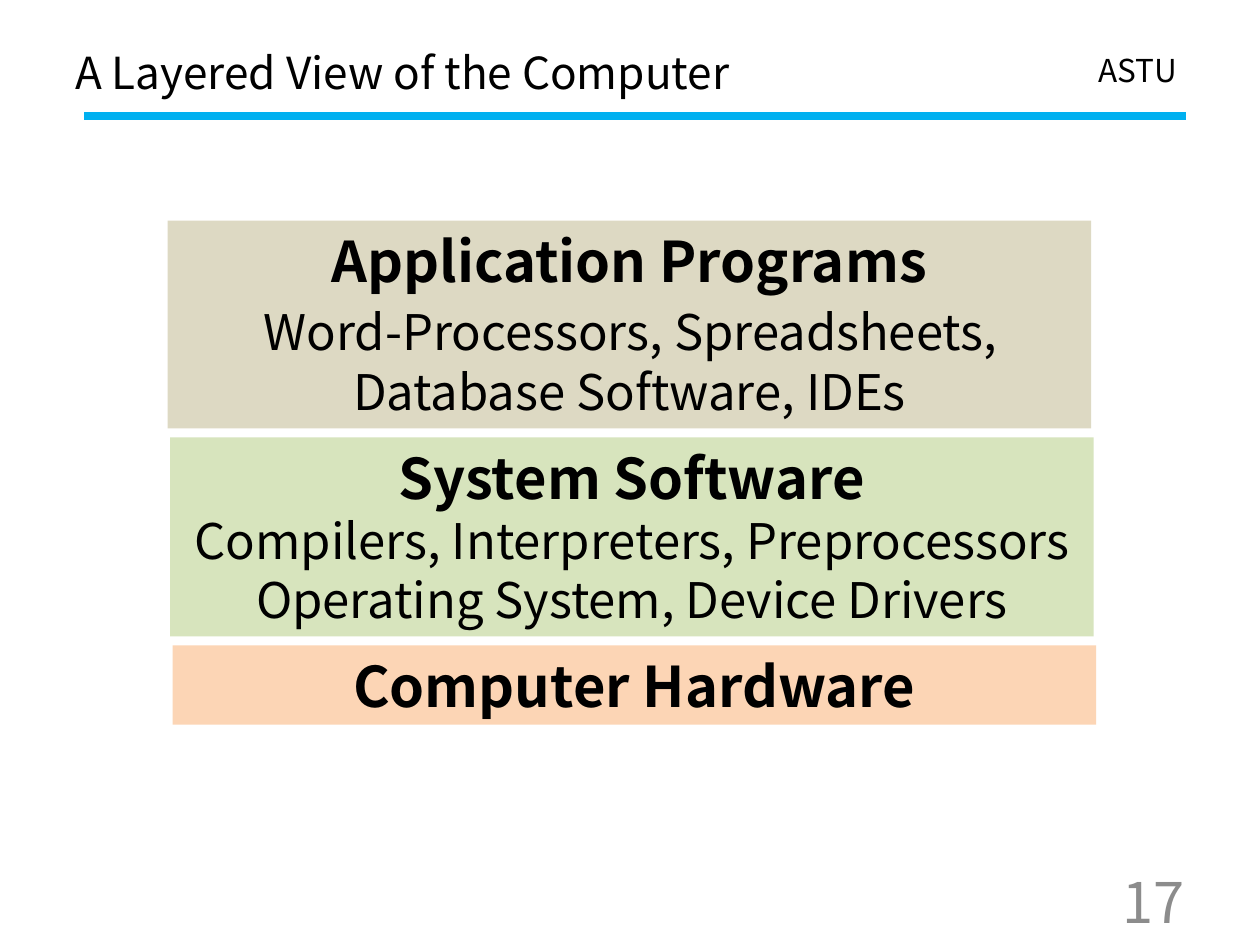
from lxml import etree
from pptx import Presentation
from pptx.dml.color import RGBColor
from pptx.enum import shapes, text
from pptx.oxml.ns import qn
from pptx.util import Cm, Pt

FONT = "Noto Sans CJK KR"
LEFT, MID, RIGHT = text.PP_ALIGN.LEFT, text.PP_ALIGN.CENTER, text.PP_ALIGN.RIGHT
TOP, CENTER = text.MSO_ANCHOR.TOP, text.MSO_ANCHOR.MIDDLE


def color(code):
    return RGBColor.from_string(code)


def add_run(para, words, size, code="000000", bold=False):
    run = para.add_run()
    run.text = words
    font = run.font
    font.name, font.size, font.bold = FONT, Pt(size), bold
    font.color.rgb = color(code)


def add_label(slide, box, words, size, align=LEFT, anchor=TOP, code="000000"):
    frame = slide.shapes.add_textbox(*map(Cm, box)).text_frame
    frame.word_wrap = True
    frame.vertical_anchor = anchor
    para = frame.paragraphs[0]
    para.alignment = align
    add_run(para, words, size, code)


def add_rule(slide, start, end, code, width):
    line = slide.shapes.add_connector(
        shapes.MSO_CONNECTOR.STRAIGHT, *map(Cm, start + end))
    line.line.color.rgb = color(code)
    line.line.width = Pt(width)
    etree.SubElement(line._element.spPr, qn("a:effectLst"))


def add_layer(slide, box, fill, lines):
    rect = slide.shapes.add_shape(shapes.MSO_SHAPE.RECTANGLE, *map(Cm, box))
    rect.shadow.inherit = False
    rect.fill.solid()
    rect.fill.fore_color.rgb = color(fill)
    rect.line.fill.background()
    frame = rect.text_frame
    frame.word_wrap = True
    frame.vertical_anchor = TOP
    para = frame.paragraphs[0]
    para.alignment = MID
    for row, runs in enumerate(lines):
        if row:
            para.add_line_break()
        for words, size, bold in runs:
            add_run(para, words, size, bold=bold)


def main():
    deck = Presentation()
    deck.slide_width, deck.slide_height = Cm(25.4), Cm(19.05)
    slide = deck.slides.add_slide(deck.slide_layouts[6])

    # Header and page number
    add_rule(slide, (1.7, 2.34), (23.9, 2.34), "00B0F0", 4.5)
    add_label(slide, (21.9, 0.91, 2.21, 1.02), "ASTU", 18)
    add_label(slide, (1.27, 0.76, 22.86, 1.37),
              "A Layered View of the Computer", 25.2, anchor=CENTER)
    add_label(slide, (18.21, 17.65, 5.92, 1.02), "17", 32, RIGHT, CENTER, "8C8C8C")

    # Layers from top to bottom, each a little further right
    layers = [
        (4.19, "DDD9C3", [
            [("Application Programs", 32, True)],
            [(" ", 32, True), ("Word-Processors, Spreadsheets, ", 28, False)],
            [("Database Software, IDEs", 28, False)]]),
        (4.01, "D7E4BD", [
            [("System Software", 32, True)],
            [("Compilers, Interpreters, Preprocessors", 28, False)],
            [("Operating System, Device Drivers", 28, False)]]),
        (1.6, "FCD5B5", [[("Computer Hardware", 32, True)]]),
    ]
    left, top, gap, shift = 3.38, 4.45, 0.18, 0.05
    for high, fill, lines in layers:
        add_layer(slide, (left, top, 18.62, high), fill, lines)
        left += shift
        top += high + gap

    deck.save("out.pptx")


if __name__ == "__main__":
    main()
